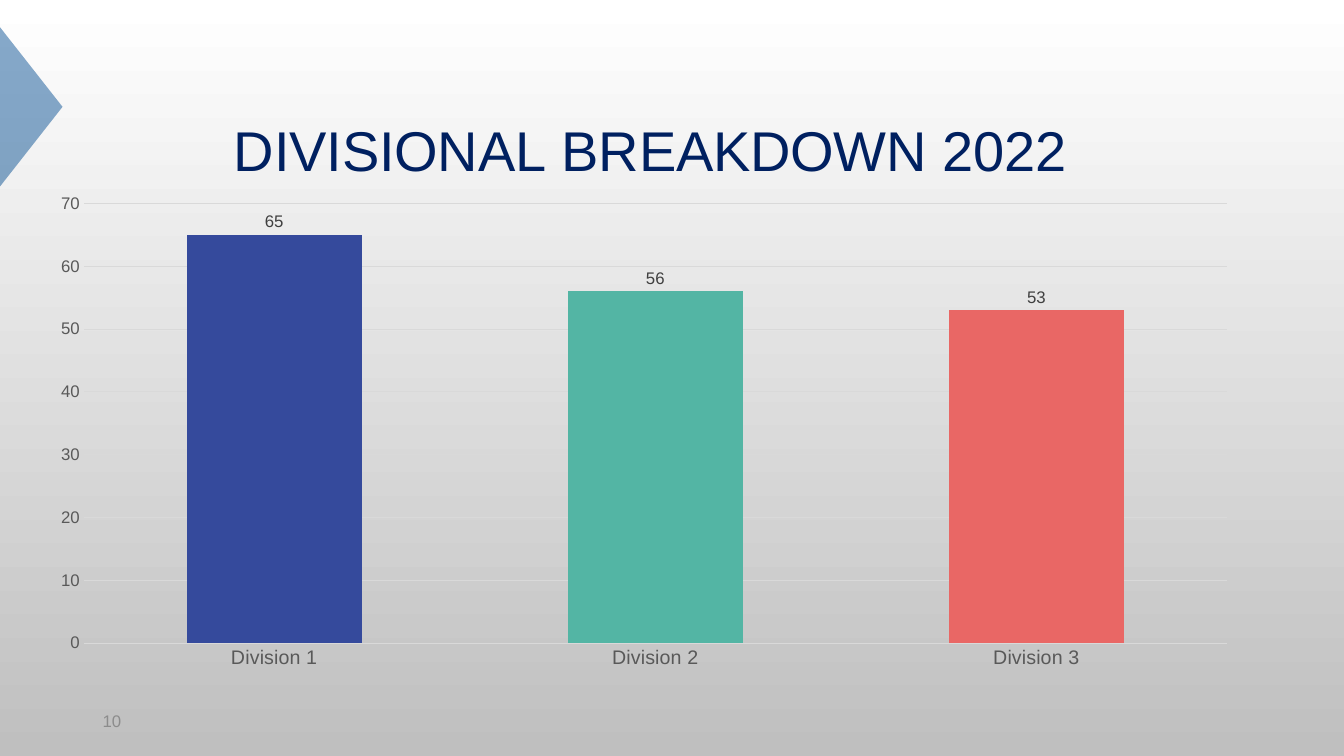
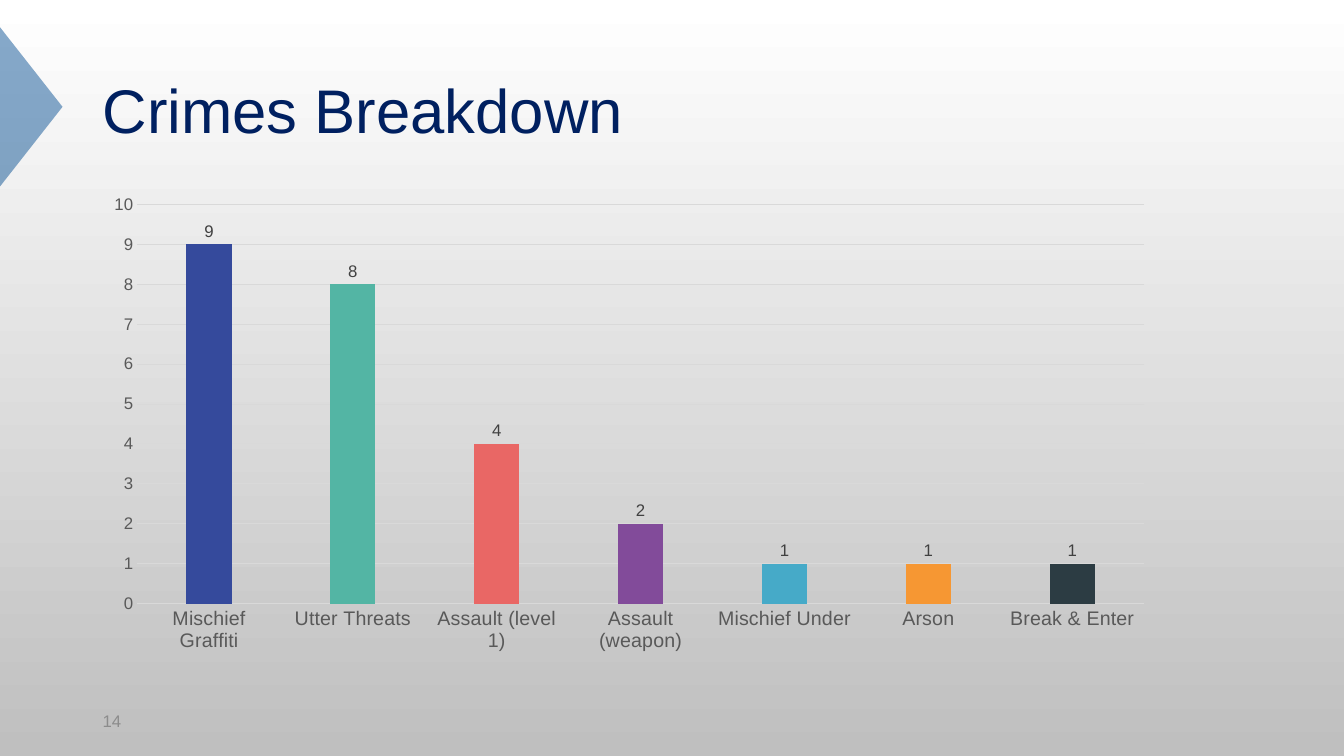
import pptx
import pptx.chart.data
import pptx.dml.color
import pptx.enum.chart
import pptx.enum.shapes
import pptx.enum.text
import pptx.oxml
import pptx.oxml.ns
import pptx.util

Inches = pptx.util.Inches
Pt = pptx.util.Pt
qn = pptx.oxml.ns.qn
NAMESPACES = pptx.oxml.ns.nsdecls("c", "a")

FONT = "Arial"
NAVY = "002060"
ARROW_BLUE = "004A8F"
AXIS_GREY = "595959"
LABEL_GREY = "404040"
NUMBER_GREY = "8C8C8C"
RULE_GREY = "D9D9D9"
BACKGROUND = ("FFFFFF", "BFBFBF")
BAR_COLOURS = ("354A9C", "53B5A4", "E96765", "824B9A", "46AAC8", "F69733", "2C3C43")

TITLE_BOX = (0.92, 0.4, 11.5, 1.45)
NUMBER_BOX = (0.92, 6.95, 3, 0.4)
ARROW_BOX = (-0.48, 0.75, 1.58, 0.62)


def rgb(colour):
    return pptx.dml.color.RGBColor.from_string(colour)


def style_font(font, size, colour):
    font.name = FONT
    font.size = Pt(size)
    font.bold = False
    font.color.rgb = rgb(colour)


def style_line(line, colour):
    line.color.rgb = rgb(colour)
    line.width = Pt(0.75)


def set_background(master):
    fill = master.background.fill
    fill.gradient()
    fill.gradient_angle = 270
    for stop, colour in zip(fill.gradient_stops, BACKGROUND):
        stop.color.rgb = rgb(colour)


def add_text(slide, box, text, size, colour, line_spacing=1.0):
    frame = slide.shapes.add_textbox(*map(Inches, box)).text_frame
    frame.word_wrap = True
    frame.vertical_anchor = pptx.enum.text.MSO_ANCHOR.MIDDLE
    paragraph = frame.paragraphs[0]
    paragraph.text = text
    paragraph.line_spacing = line_spacing
    style_font(paragraph.font, size, colour)


def add_edge_arrow(slide, box):
    arrow = slide.shapes.add_shape(
        pptx.enum.shapes.MSO_SHAPE.ISOSCELES_TRIANGLE, *map(Inches, box))
    arrow.rotation = 90
    arrow.adjustments[0] = 0.5
    arrow.shadow.inherit = False
    arrow.line.fill.background()
    arrow.fill.solid()
    arrow.fill.fore_color.rgb = rgb(ARROW_BLUE)
    colour = arrow.fill._xPr.find(".//" + qn("a:srgbClr"))
    colour.append(pptx.oxml.parse_xml(f'<a:alpha {NAMESPACES} val="47000"/>'))


def set_layout(parent, index, box, area, target=""):
    old = parent.find(qn("c:layout"))
    if old is not None:
        parent.remove(old)
    left, top, width, height = box
    shares = {"x": (area[0] - left) / width, "y": (area[1] - top) / height}
    if len(area) == 4:
        shares.update(w=area[2] / width, h=area[3] / height)
    modes = "".join(f'<c:{key}Mode val="edge"/>' for key in "xy")
    values = "".join(f'<c:{key} val="{share:.4f}"/>' for key, share in shares.items())
    parent.insert(index, pptx.oxml.parse_xml(
        f"<c:layout {NAMESPACES}><c:manualLayout>{target}{modes}{values}"
        "</c:manualLayout></c:layout>"))


def clear_chart_fill(chart):
    def no_fill():
        return pptx.oxml.parse_xml(
            f"<c:spPr {NAMESPACES}><a:noFill/><a:ln><a:noFill/></a:ln></c:spPr>")

    body = chart.element.find(qn("c:chart"))
    body.addnext(no_fill())
    body.find(qn("c:plotArea")).append(no_fill())


def style_axes(chart, maximum, step):
    categories, values = chart.category_axis, chart.value_axis
    for axis, size in ((categories, 14), (values, 12)):
        axis.major_tick_mark = pptx.enum.chart.XL_TICK_MARK.NONE
        axis.minor_tick_mark = pptx.enum.chart.XL_TICK_MARK.NONE
        style_font(axis.tick_labels.font, size, AXIS_GREY)
    categories.has_major_gridlines = False
    style_line(categories.format.line, RULE_GREY)
    values.minimum_scale = 0
    values.maximum_scale = maximum
    values.major_unit = step
    values.has_major_gridlines = True
    style_line(values.major_gridlines.format.line, RULE_GREY)
    values.format.line.fill.background()


def style_bars(chart, gap, overlap):
    plot = chart.plots[0]
    plot.vary_by_categories = False
    plot.gap_width = gap
    plot.overlap = overlap
    plot.has_data_labels = True
    labels = plot.data_labels
    labels.show_value = True
    labels.position = pptx.enum.chart.XL_LABEL_POSITION.OUTSIDE_END
    style_font(labels.font, 12, LABEL_GREY)
    bars = plot.series[0]
    for index, colour in zip(range(len(bars.values)), BAR_COLOURS):
        fill = bars.points[index].format.fill
        fill.solid()
        fill.fore_color.rgb = rgb(colour)


def add_bar_chart(slide, box, plot_box, counts, maximum, step, gap, overlap):
    data = pptx.chart.data.CategoryChartData()
    data.categories = list(counts)
    data.add_series("Series 1", list(counts.values()))
    chart = slide.shapes.add_chart(
        pptx.enum.chart.XL_CHART_TYPE.COLUMN_CLUSTERED, *map(Inches, box), data).chart
    style_font(chart.font, 10, "000000")
    chart.has_legend = False
    chart.has_title = False
    style_axes(chart, maximum, step)
    style_bars(chart, gap, overlap)
    clear_chart_fill(chart)
    set_layout(chart.element.find(".//" + qn("c:plotArea")), 0, box, plot_box,
               '<c:layoutTarget val="inner"/>')
    return chart


def add_chart_title(chart, box, corner, text):
    chart.has_title = True
    paragraph = chart.chart_title.text_frame.paragraphs[0]
    paragraph.text = text
    style_font(paragraph.font, 40, NAVY)
    set_layout(chart.element.find(".//" + qn("c:title")), 1, box, corner)


def start_slide(deck, number):
    slide = deck.slides.add_slide(deck.slide_layouts[6])
    add_edge_arrow(slide, ARROW_BOX)
    add_text(slide, NUMBER_BOX, number, 12, NUMBER_GREY)
    return slide


def add_divisions_slide(deck):
    slide = start_slide(deck, "10")
    box = (0.36, 0.69, 12.06, 6.07)
    counts = {"Division 1": 65, "Division 2": 56, "Division 3": 53}
    chart = add_bar_chart(slide, box, (0.83, 2.02, 11.34, 4.36), counts,
                          maximum=70, step=10, gap=118, overlap=-44)
    add_chart_title(chart, box, (2.22, 1.03), "DIVISIONAL BREAKDOWN 2022")


def add_crimes_slide(deck):
    slide = start_slide(deck, "14")
    add_text(slide, TITLE_BOX, "Crimes Breakdown", 44, NAVY, line_spacing=0.9)
    counts = {
        "Mischief Graffiti": 9,
        "Utter Threats": 8,
        "Assault (level 1)": 4,
        "Assault (weapon)": 2,
        "Mischief Under": 1,
        "Arson": 1,
        "Break & Enter": 1,
    }
    add_bar_chart(slide, (0.92, 1.85, 10.65, 4.71), (1.36, 2.03, 9.99, 3.96), counts,
                  maximum=10, step=1, gap=219, overlap=-27)


def main():
    deck = pptx.Presentation()
    deck.slide_width = Inches(13.33)
    deck.slide_height = Inches(7.5)
    set_background(deck.slide_master)
    add_divisions_slide(deck)
    add_crimes_slide(deck)
    deck.save("out.pptx")


if __name__ == "__main__":
    main()
